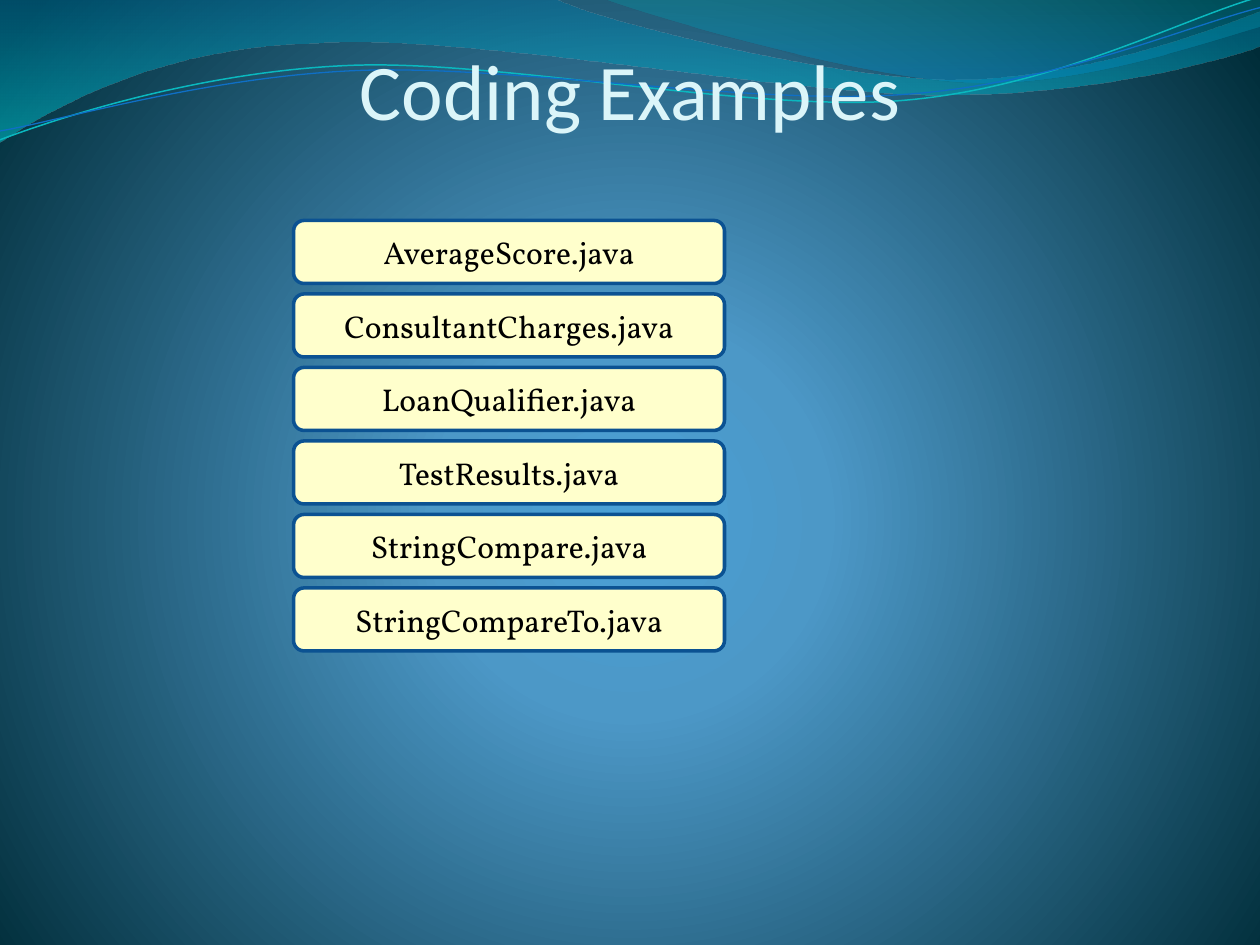
"""Build the "Coding Examples" slide: a list of Java files beneath a wave header."""

from dataclasses import dataclass
from math import cos, radians, sin
from typing import Any, Optional

from lxml.etree import SubElement
from pptx import Presentation
from pptx.dml.color import RGBColor
from pptx.enum.shapes import MSO_SHAPE
from pptx.enum.text import MSO_ANCHOR, MSO_AUTO_SIZE, PP_ALIGN
from pptx.oxml.ns import qn
from pptx.util import Inches, Pt

COLORS = {
    "glow": "4AA0D6", "sky": "4C98C7", "night": "002C38",
    "ocean": "0074A1", "aqua": "00C6CF", "teal": "00A1A9", "lagoon": "008BBF",
    "cyan": "0AB8BF", "blue": "0F6FC6",
    "title": "DBF5F9", "cream": "FFFFCC", "border": "0B5292", "text": "000000",
}
FILES = (
    "AverageScore.java", "ConsultantCharges.java", "LoanQualifier.java",
    "TestResults.java", "StringCompare.java", "StringCompareTo.java",
)
BOX_LEFT, BOX_TOP, BOX_WIDTH, BOX_HEIGHT = 2.33, 1.75, 3.42, 0.5
BOX_PITCH = 7 / 12

Point = tuple[float, float]


@dataclass(frozen=True)
class Stop:
    position: int
    color: str
    opacity: int = 100


@dataclass(frozen=True)
class Wave:
    """An outline of segments: one point is a straight line, three are a Bezier curve."""

    frame: tuple[float, float, float, float]
    start: Point
    segments: tuple[tuple[Point, ...], ...]
    stops: tuple[Stop, ...] = ()
    line_color: Optional[str] = None
    line_width: float = 0
    rotation: float = 0


BACKGROUND = (Stop(0, "glow"), Stop(25, "sky"), Stop(100, "night"))
FILLED_WAVES = (
    Wave((-0.01, -0.01, 10.02, 1.14), (0, 0), (
        ((4.4, -0.01),),
        ((4.76, 0.17), (6.64, 0.63), (7.58, 0.63)),
        ((8.53, 0.63), (9.58, 0.26), (10, 0.09)),
        ((10.01, 0.36),),
        ((9.83, 0.44), (8.7, 0.76), (7.46, 0.75)),
        ((6.22, 0.75), (3.82, 0.28), (2.57, 0.34)),
        ((1.29, 0.36), (0.46, 0.83), (-0.01, 1.13)),
        ((0, 0),),
    ), stops=(Stop(0, "ocean", 45), Stop(100, "aqua", 55))),
    Wave((4.79, -0.01, 5.21, 0.7), (4.79, -0.01), (
        ((5.09, 0.11), (6.82, 0.62), (7.69, 0.65)),
        ((8.56, 0.69), (9.61, 0.32), (10, 0.21)),
        ((10, 0),),
        ((4.79, -0.01),),
    ), stops=(Stop(0, "teal", 30), Stop(80, "lagoon", 45))),
)
LINE_WAVES = (
    Wave((-0.02, 0.22, 10.02, 0.71), (0, 1.11), (
        ((0.48, 0.93), (1.58, 0.57), (2.77, 0.52)),
        ((3.95, 0.47), (5.93, 0.89), (7.13, 0.8)),
        ((8.33, 0.71), (9.38, 0.15), (9.98, -0.02)),
    ), line_color="cyan", line_width=0.85, rotation=357.3),
    Wave((-0.02, 0.3, 10.03, 0.58), (0, 1.04), (
        ((0.47, 0.96), (1.64, 0.61), (2.83, 0.56)),
        ((4.03, 0.51), (5.97, 0.84), (7.17, 0.75)),
        ((8.36, 0.67), (9.41, 0.21), (10, 0.06)),
    ), line_color="blue", line_width=0.75, rotation=357.3),
)


def rgb(name: str) -> RGBColor:
    return RGBColor.from_string(COLORS[name])


def set_gradient(owner: Any, fill: Any, stops: tuple[Stop, ...], radial: bool = False) -> None:
    fill.gradient()
    gradient = owner.element.find(".//" + qn("a:gradFill"))
    for child in list(gradient):
        gradient.remove(child)
    stop_list = SubElement(gradient, qn("a:gsLst"))
    for stop in stops:
        entry = SubElement(stop_list, qn("a:gs"), pos=str(stop.position * 1000))
        color = SubElement(entry, qn("a:srgbClr"), val=COLORS[stop.color])
        if stop.opacity < 100:
            SubElement(color, qn("a:alpha"), val=str(stop.opacity * 1000))
    if radial:
        focus = SubElement(gradient, qn("a:path"), path="circle")
        SubElement(focus, qn("a:fillToRect"), l="10000", t="110000", r="10000", b="100000")
    else:
        SubElement(gradient, qn("a:lin"), ang="5400000", scaled="0")


def to_frame(point: Point, wave: Wave) -> Point:
    """Turn a point on the slide into one inside the wave's unrotated frame."""
    left, top, width, height = wave.frame
    x, y = point[0] - left - width / 2, point[1] - top - height / 2
    angle = radians(-wave.rotation)
    return (x * cos(angle) - y * sin(angle) + width / 2,
            x * sin(angle) + y * cos(angle) + height / 2)


def trace_outline(shape: Any, wave: Wave) -> None:
    outline = shape.element.find(".//" + qn("a:path"))
    for child in list(outline):
        outline.remove(child)
    outline.set("w", str(shape.width))
    outline.set("h", str(shape.height))
    for index, segment in enumerate(((wave.start,), *wave.segments)):
        tag = "a:moveTo" if index == 0 else "a:cubicBezTo" if len(segment) == 3 else "a:lnTo"
        step = SubElement(outline, qn(tag))
        for point in segment:
            x, y = to_frame(point, wave)
            SubElement(step, qn("a:pt"), x=str(Inches(x)), y=str(Inches(y)))
    if wave.stops:
        SubElement(outline, qn("a:close"))


def draw_wave(shapes: Any, wave: Wave) -> None:
    builder = shapes.build_freeform(*map(Inches, wave.start))
    builder.add_line_segments([tuple(map(Inches, part[-1])) for part in wave.segments], close=False)
    shape = builder.convert_to_shape()
    shape.left, shape.top, shape.width, shape.height = map(Inches, wave.frame)
    shape.rotation = wave.rotation
    trace_outline(shape, wave)
    shape.shadow.inherit = False
    if wave.stops:
        set_gradient(shape, shape.fill, wave.stops)
    else:
        shape.fill.background()
    if wave.line_color:
        shape.line.color.rgb = rgb(wave.line_color)
        shape.line.width = Pt(wave.line_width)
    else:
        shape.line.fill.background()


def write_text(box: Any, text: str, *, size: float, font: str, color: str,
               anchor: MSO_ANCHOR = MSO_ANCHOR.MIDDLE) -> None:
    frame = box.text_frame
    frame.word_wrap = True
    frame.auto_size = MSO_AUTO_SIZE.NONE
    frame.vertical_anchor = anchor
    para = frame.paragraphs[0]
    para.alignment = PP_ALIGN.CENTER
    span = para.add_run()
    span.text = text
    span.font.size = Pt(size)
    span.font.name = font
    span.font.color.rgb = rgb(color)


def place_title(page: Any, text: str) -> None:
    title = page.shapes.title
    title.left, title.top, title.width, title.height = map(Inches, (0.5, 0.25, 9, 0.83))
    frame = title.text_frame
    frame.margin_left = frame.margin_right = frame.margin_bottom = 0
    frame.margin_top = Inches(0.05)
    write_text(title, text, size=45, font="Calibri", color="title", anchor=MSO_ANCHOR.BOTTOM)
    title.element.getparent().append(title.element)


def draw_file_box(page: Any, name: str, top: float) -> None:
    box = page.shapes.add_shape(
        MSO_SHAPE.ROUNDED_RECTANGLE, *map(Inches, (BOX_LEFT, top, BOX_WIDTH, BOX_HEIGHT)))
    box.shadow.inherit = False
    box.fill.solid()
    box.fill.fore_color.rgb = rgb("cream")
    box.line.color.rgb = rgb("border")
    box.line.width = Pt(2)
    write_text(box, name, size=18, font="Vollkorn", color="text")


def main() -> None:
    deck = Presentation()
    deck.slide_width, deck.slide_height = Inches(10), Inches(7.5)
    page = deck.slides.add_slide(deck.slide_layouts.get_by_name("Title Only"))
    set_gradient(page, page.background.fill, BACKGROUND, radial=True)
    for wave in FILLED_WAVES + LINE_WAVES:
        draw_wave(page.shapes, wave)
    place_title(page, "Coding Examples")
    for index, name in enumerate(FILES):
        draw_file_box(page, name, BOX_TOP + index * BOX_PITCH)
    deck.save("out.pptx")


if __name__ == "__main__":
    main()
